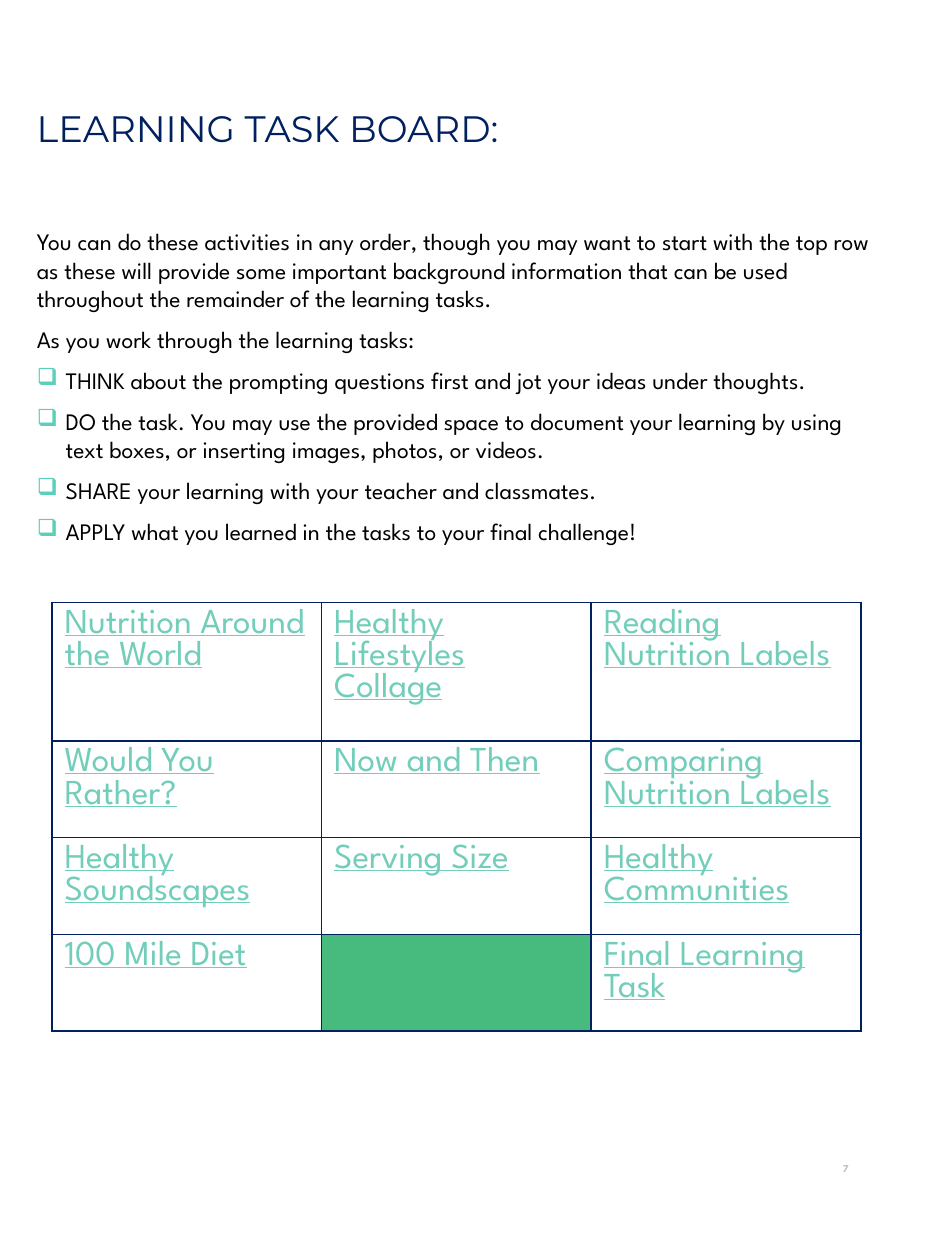
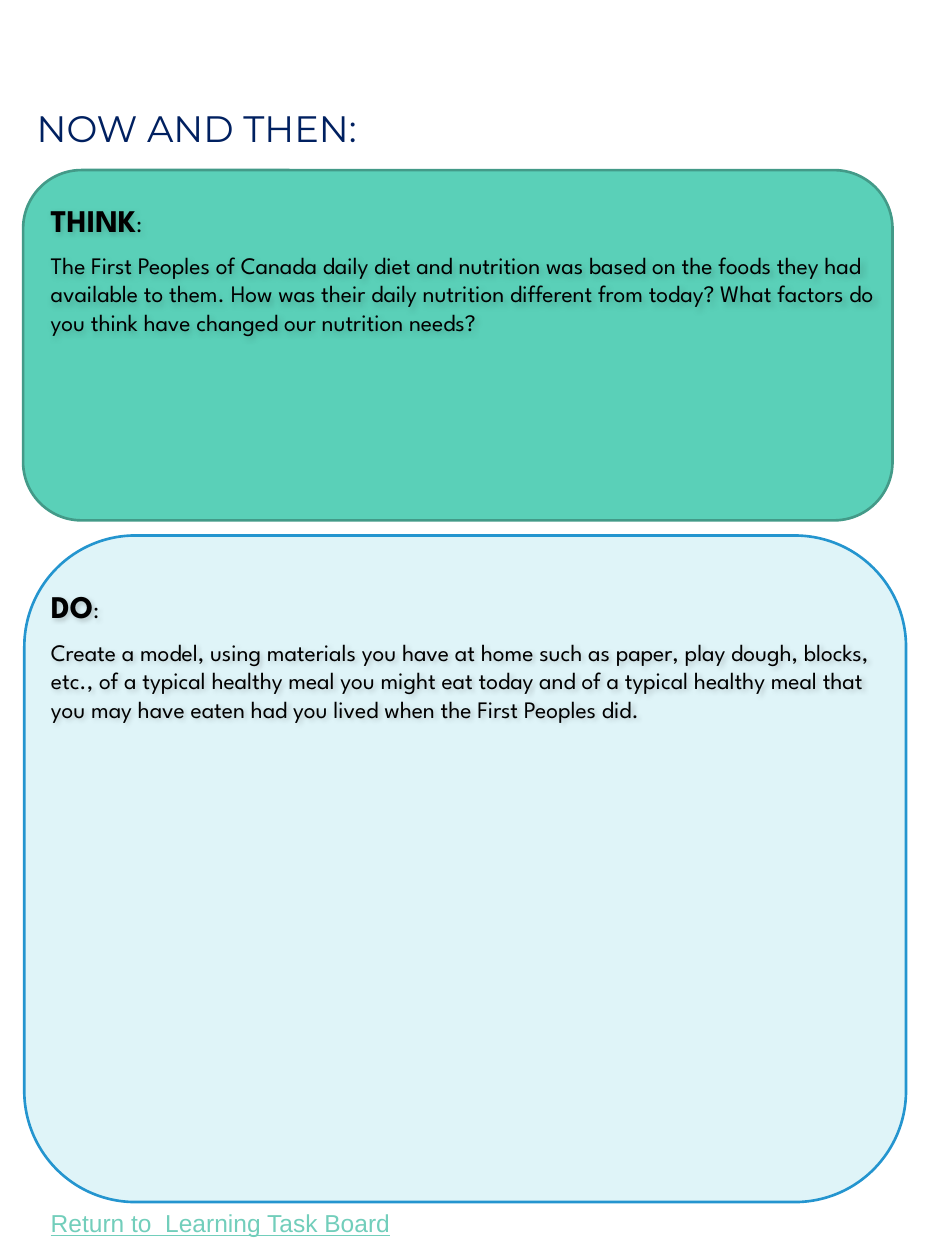
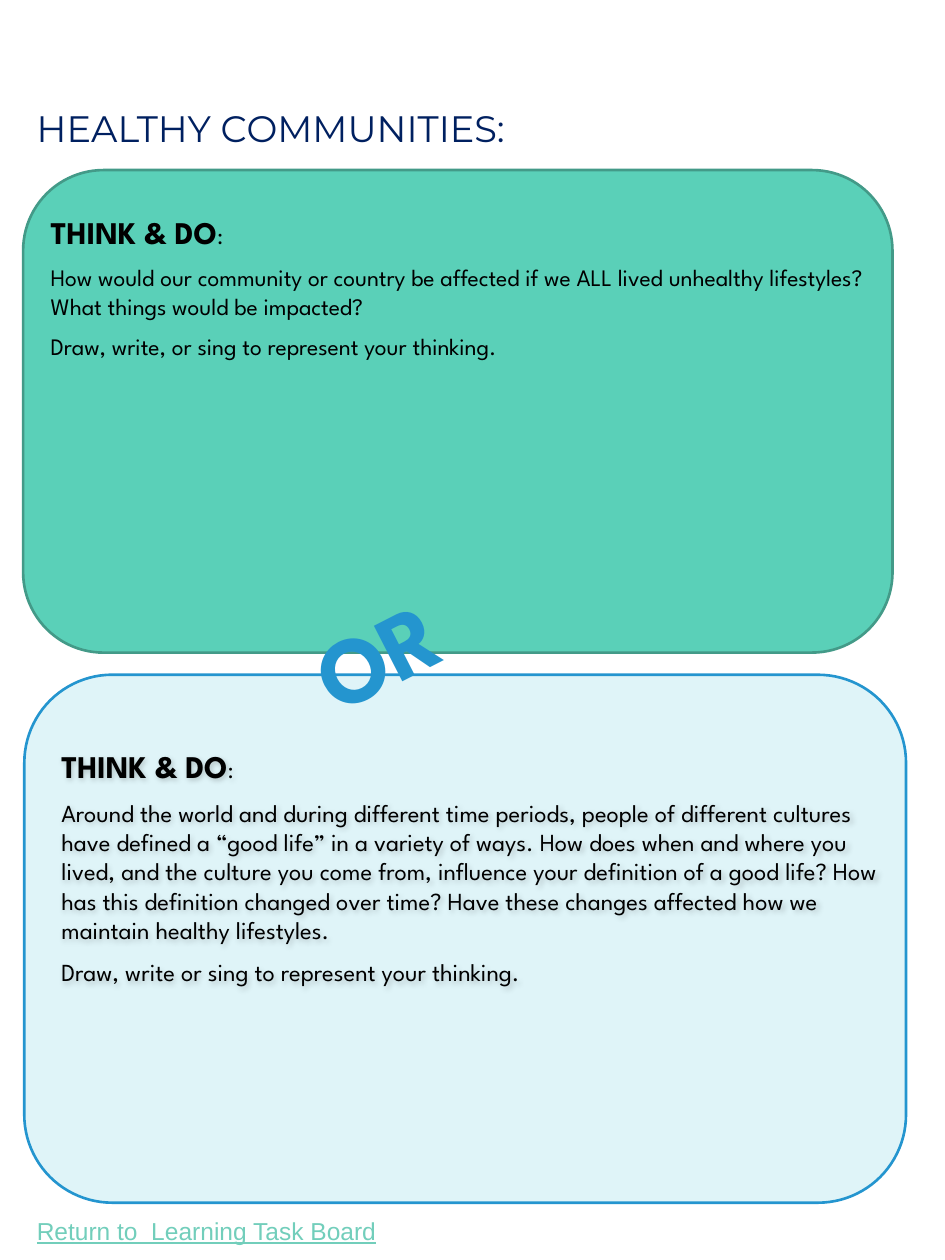
from lxml import etree
from pptx import Presentation
from pptx.dml.color import RGBColor
from pptx.enum import shapes, text
from pptx.oxml import ns
from pptx.util import Inches, Pt

# Shared look
NAVY = RGBColor(0x00, 0x20, 0x60)
BLACK = RGBColor(0x00, 0x00, 0x00)
GREY = RGBColor(0xBF, 0xBF, 0xBF)
LINK = RGBColor(0x72, 0xCE, 0xBB)
TEAL = RGBColor(0x5A, 0xD0, 0xB8)
TEAL_EDGE = RGBColor(0x43, 0x9A, 0x88)
GREEN = RGBColor(0x47, 0xBB, 0x7E)
ICE = RGBColor(0xDF, 0xF4, 0xF8)
BLUE = RGBColor(0x24, 0x95, 0xCF)
TITLE_FONT, BODY_FONT, LINK_FONT = "Montserrat", "League Spartan", "Arial"
BODY_SIZE, HEADING_SIZE = 13.5, 18

# Page grid: 100 columns by 100 rows
WIDTH, HEIGHT = Inches(7.5), Inches(10)
COL, ROW = WIDTH / 100, HEIGHT / 100
LEFT, TOP = 2.58, 13.5  # column and row where the content starts
TEXT_COLS = 91.9
TASK_ROWS = 4.1  # least height of a task board row


def place(box):
    left, top, width, height = box
    return [round(v) for v in (left * COL, top * ROW, width * COL, height * ROW)]


def style(run, size, color=BLACK, font=BODY_FONT, bold=False, underline=False):
    run.font.size = Pt(size)
    run.font.name = font
    run.font.color.rgb = color
    run.font.bold = bold
    run.font.underline = underline


def add_text(slide, box, words="", anchor=text.MSO_ANCHOR.MIDDLE, **look):
    label = slide.shapes.add_textbox(*place(box))
    frame = label.text_frame
    frame.word_wrap = True
    frame.vertical_anchor = anchor
    if words:
        frame.text = words
        style(frame.paragraphs[0].runs[0], **look)
    return label


def add_paragraph(frame, words, size=BODY_SIZE):
    first = not frame.paragraphs[0].runs
    paragraph = frame.paragraphs[0] if first else frame.add_paragraph()
    paragraph.text = words
    paragraph.space_before = Pt(0.2 * size)
    paragraph.space_after = Pt(4.5)
    style(paragraph.runs[0], size)
    return paragraph


def add_checkbox(paragraph):
    props = paragraph._p.get_or_add_pPr()
    props.set("marL", str(Inches(0.23)))
    props.set("indent", str(-Inches(0.23)))
    color = etree.SubElement(props, ns.qn("a:buClr"))
    etree.SubElement(color, ns.qn("a:srgbClr"), val=str(TEAL))
    etree.SubElement(props, ns.qn("a:buChar"), char="❑")


def add_soft_shadow(label):
    effects = etree.SubElement(label._element.spPr, ns.qn("a:effectLst"))
    shadow = etree.SubElement(effects, ns.qn("a:outerShdw"), blurRad=str(Pt(3)),
                              dist=str(Pt(1.5)), dir="2700000", algn="tl")
    color = etree.SubElement(shadow, ns.qn("a:srgbClr"), val=str(BLACK))
    etree.SubElement(color, ns.qn("a:alpha"), val="20000")


def add_title(slide, words):
    add_text(slide, (LEFT, 3.8, 95, 12.7), words, size=21, color=NAVY, font=TITLE_FONT)


def add_return_line(slide, left, top):
    add_text(slide, (left, top, 39.3, 3.4), "Return to  Learning Task Board",
             text.MSO_ANCHOR.TOP, size=14, color=LINK, font=LINK_FONT, underline=True)


def add_instructions(slide, box, intro, steps):
    frame = add_text(slide, box).text_frame
    for words in intro:
        add_paragraph(frame, words)
    for words in steps:
        add_checkbox(add_paragraph(frame, words))


def add_borders(cell):
    props = cell._tc.get_or_add_tcPr()
    for position, side in enumerate(("lnL", "lnR", "lnT", "lnB")):
        line = etree.Element(ns.qn("a:" + side), w=str(Pt(1)))
        fill = etree.SubElement(line, ns.qn("a:solidFill"))
        etree.SubElement(fill, ns.qn("a:srgbClr"), val=str(NAVY))
        props.insert(position, line)


def add_task_board(slide, left, top, width, tasks):
    """Grid of tasks whose rows grow with their text."""
    box = (left, top, width, TASK_ROWS * len(tasks))
    board = slide.shapes.add_table(len(tasks), len(tasks[0]), *place(box)).table
    board.first_row = board.horz_banding = False
    for row, names in zip(board.rows, tasks):
        for cell, name in zip(row.cells, names):
            if name:
                cell.fill.background()
                cell.text = name
                style(cell.text_frame.paragraphs[0].runs[0], 20, LINK, underline=True)
            else:
                cell.fill.solid()
                cell.fill.fore_color.rgb = GREEN
            add_borders(cell)


def add_panel(slide, box, fill, edge, heading, body, text_rows, indent=1.5,
              size=BODY_SIZE, shadow=True):
    """Rounded panel with a heading and body text over its upper part."""
    panel = slide.shapes.add_shape(shapes.MSO_SHAPE.ROUNDED_RECTANGLE, *place(box))
    panel.shadow.inherit = False
    panel.fill.solid()
    panel.fill.fore_color.rgb = fill
    panel.line.color.rgb = edge
    panel.line.width = Pt(1.5)

    left, top = box[:2]
    label = add_text(slide, (left + indent, top, TEXT_COLS, text_rows))
    if shadow:
        add_soft_shadow(label)
    title = add_paragraph(label.text_frame, heading, HEADING_SIZE)
    title.runs[0].font.bold = True
    colon = title.add_run()
    colon.text = ":"
    style(colon, BODY_SIZE)
    for words in body:
        add_paragraph(label.text_frame, words, size)


def add_or(slide, box):
    label = add_text(slide, box, "OR", text.MSO_ANCHOR.TOP, size=54, color=BLUE, bold=True)
    label.rotation = 332.9
    label.text_frame.word_wrap = False
    label.text_frame.paragraphs[0].alignment = text.PP_ALIGN.CENTER


def build_board_slide(slide):
    add_title(slide, "LEARNING TASK BOARD:")
    add_instructions(slide, (LEFT, TOP, TEXT_COLS, 34.3), [
        "You can do these activities in any order, though you may want to start with "
        "the top row as these will provide some important background information that "
        "can be used throughout the remainder of the learning tasks.",
        "As you work through the learning tasks:",
    ], [
        "THINK about the prompting questions first and jot your ideas under thoughts.",
        "DO the task. You may use the provided space to document your learning by using "
        "text boxes, or inserting images, photos, or videos.",
        "SHARE your learning with your teacher and classmates.",
        "APPLY what you learned in the tasks to your final challenge!",
    ])
    number = add_text(slide, (86.6, 90.1, 4.5, 5.3), "7", size=6, color=GREY, bold=True)
    number.text_frame.paragraphs[0].alignment = text.PP_ALIGN.RIGHT
    add_task_board(slide, 5.5, 47.8, 85.6, [
        ["Nutrition Around the World", "Healthy Lifestyles Collage",
         "Reading Nutrition Labels"],
        ["Would You Rather?", "Now and Then", "Comparing Nutrition Labels"],
        ["Healthy Soundscapes", "Serving Size", "Healthy Communities"],
        ["100 Mile Diet", None, "Final Learning Task"],
    ])


def build_now_and_then_slide(slide):
    add_title(slide, "NOW AND THEN:")
    add_return_line(slide, 4.05, 95.4)
    add_panel(slide, (2.45, TOP, 92, 27.8), TEAL, TEAL_EDGE, "THINK", [
        "The First Peoples of Canada daily diet and nutrition was based on the foods they "
        "had available to them. How was their daily nutrition different from today? What "
        "factors do you think have changed our nutrition needs?",
    ], text_rows=15.6, indent=1.6)
    add_panel(slide, (LEFT, 42.5, 93.3, 52.9), ICE, BLUE, "DO", [
        "Create a model, using materials you have at home such as paper, play dough, "
        "blocks, etc., of a typical healthy meal you might eat today and of a typical "
        "healthy meal that you may have eaten had you lived when the First Peoples did.",
    ], text_rows=19)


def build_communities_slide(slide):
    add_title(slide, "HEALTHY COMMUNITIES:")
    add_return_line(slide, LEFT, 96)
    add_panel(slide, (2.45, TOP, 92, 38.3), TEAL, TEAL_EDGE, "THINK & DO", [
        "How would our community or country be affected if we ALL lived unhealthy "
        "lifestyles? What things would be impacted?",
        "Draw, write, or sing to represent your thinking.",
    ], text_rows=18.5, indent=1.6, shadow=False)
    add_panel(slide, (LEFT, 53.55, 93.3, 41.9), ICE, BLUE, "THINK & DO", [
        "Around the world and during different time periods, people of different cultures "
        "have defined a “good life” in a variety of ways. How does when and where you "
        "lived, and the culture you come from, influence your definition of a good life? "
        "How has this definition changed over time? Have these changes affected how we "
        "maintain healthy lifestyles.",
        "Draw, write or sing to represent your thinking.",
    ], text_rows=30.5, indent=2.6, size=14)
    add_or(slide, (31.3, 46.8, 17.1, 10.1))


def main():
    deck = Presentation()
    deck.slide_width, deck.slide_height = WIDTH, HEIGHT
    for build in (build_board_slide, build_now_and_then_slide, build_communities_slide):
        build(deck.slides.add_slide(deck.slide_layouts[6]))
    deck.save("out.pptx")


if __name__ == "__main__":
    main()
